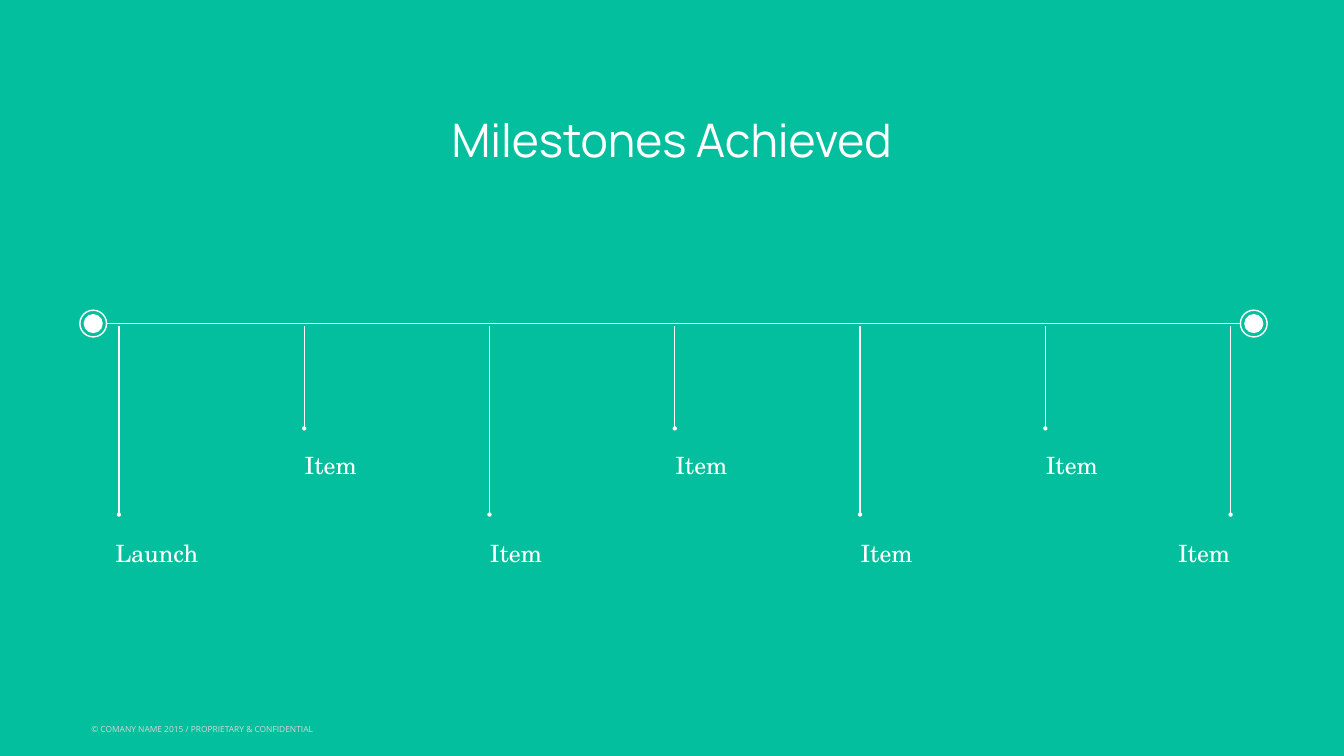
from dataclasses import dataclass

import pptx
import pptx.dml.color
import pptx.enum.shapes
import pptx.enum.text
import pptx.oxml
import pptx.oxml.ns
import pptx.util
from pptx.util import Inches

ALIGN = pptx.enum.text.PP_ALIGN
ANCHOR = pptx.enum.text.MSO_ANCHOR
FIT = pptx.enum.text.MSO_AUTO_SIZE


@dataclass(frozen=True)
class Theme:
    background: str = "04BF9D"
    ink: str = "FFFFFF"
    muted: str = "D6D6D6"
    rule: float = 2
    inset: float = 0.06
    title: tuple = ("Manrope", 66)
    label: tuple = ("TeX Gyre Schola", 34)
    footer: tuple = ("Open Sans", 12)


THEME = Theme()
AXIS_Y = 6.42
STEM_TOP = 6.46
FIRST_STEM, LAST_STEM = 2.36, 24.42
# (stem bottom, label top) for the alternating long and short stems
LEVELS = [(10.21, 10.62), (8.5, 8.87)]
MILESTONES = ["Launch"] + ["Item"] * 6


def rgb(value):
    return pptx.dml.color.RGBColor.from_string(value)


def write(shape, text, style, color, align, anchor=ANCHOR.MIDDLE,
          wrap=False, fit=FIT.SHAPE_TO_FIT_TEXT):
    frame = shape.text_frame
    frame.text = text
    inset = Inches(THEME.inset)
    frame_format = {
        "margin_left": inset, "margin_right": inset,
        "margin_top": inset, "margin_bottom": inset,
        "vertical_anchor": anchor, "word_wrap": wrap, "auto_size": fit,
    }
    for name, value in frame_format.items():
        setattr(frame, name, value)
    paragraph = frame.paragraphs[0]
    paragraph.alignment = align
    family, size = style
    font_format = {"name": family, "size": pptx.util.Pt(size), "bold": False}
    for name, value in font_format.items():
        setattr(paragraph.font, name, value)
    paragraph.font.color.rgb = rgb(color)


def add_title(slide, text):
    title = slide.shapes.title
    place = {"left": 2.6, "top": 1.94, "width": 21.46, "height": 1.63}
    for name, value in place.items():
        setattr(title, name, Inches(value))
    write(title, text, THEME.title, THEME.ink, ALIGN.CENTER,
          wrap=True, fit=FIT.NONE)


def add_text(slide, box, *args, **options):
    write(slide.shapes.add_textbox(*map(Inches, box)), *args, **options)


def add_rule(slide, start, end, dotted=False):
    """Draw a straight rule, optionally with a dot at its start."""
    rule = slide.shapes.add_connector(
        pptx.enum.shapes.MSO_CONNECTOR.STRAIGHT,
        *map(Inches, start + end))
    rule.line.color.rgb = rgb(THEME.ink)
    rule.line.width = pptx.util.Pt(THEME.rule)
    if dotted:
        dot = pptx.oxml.parse_xml(
            f'<a:headEnd {pptx.oxml.ns.nsdecls("a")} type="oval"/>')
        rule.line._get_or_add_ln().append(dot)
    properties = rule._element.spPr
    properties.append(pptx.oxml.parse_xml(
        f'<a:effectLst {pptx.oxml.ns.nsdecls("a")}/>'))


def add_terminal(slide, center_x):
    """Group a ring and its solid core at one end of the axis."""
    group = slide.shapes.add_group_shape()
    for diameter, solid in ((0.53, False), (0.38, True)):
        circle = group.shapes.add_shape(
            pptx.enum.shapes.MSO_SHAPE.OVAL,
            Inches(center_x - diameter / 2), Inches(AXIS_Y - diameter / 2),
            Inches(diameter), Inches(diameter))
        circle.shadow.inherit = False
        if solid:
            circle.fill.solid()
            circle.fill.fore_color.rgb = rgb(THEME.ink)
            circle.line.fill.background()
        else:
            circle.fill.background()
            circle.line.color.rgb = rgb(THEME.ink)
            circle.line.width = pptx.util.Pt(THEME.rule)


def add_milestone(slide, index, text):
    last = len(MILESTONES) - 1
    x = FIRST_STEM + index * (LAST_STEM - FIRST_STEM) / last
    stem_bottom, label_top = LEVELS[index % 2]
    add_rule(slide, (x, stem_bottom), (x, STEM_TOP), dotted=True)

    width, left, align = 1.24, x - 0.05, ALIGN.LEFT
    if index == 0:
        width, left = 1.86, x - 0.13
    elif index == last:
        left, align = x + 0.05 - width, ALIGN.RIGHT
    add_text(slide, (left, label_top, width, 0.71), text,
             THEME.label, THEME.ink, align)


def main():
    deck = pptx.Presentation()
    deck.slide_width, deck.slide_height = Inches(26.67), Inches(15)
    slide = deck.slides.add_slide(deck.slide_layouts.get_by_name("Title Only"))
    slide.background.fill.solid()
    slide.background.fill.fore_color.rgb = rgb(THEME.background)

    add_title(slide, "Milestones Achieved")
    add_rule(slide, (2.12, AXIS_Y), (24.6, AXIS_Y))
    for center_x in (1.85, 24.88):
        add_terminal(slide, center_x)
    for index, text in enumerate(MILESTONES):
        add_milestone(slide, index, text)
    add_text(slide, (1.59, 14.3, 4.85, 0.35),
             "© COMANY NAME 2015 / PROPRIETARY & CONFIDENTIAL",
             THEME.footer, THEME.muted, ALIGN.CENTER, anchor=ANCHOR.TOP)
    deck.save("out.pptx")


if __name__ == "__main__":
    main()
